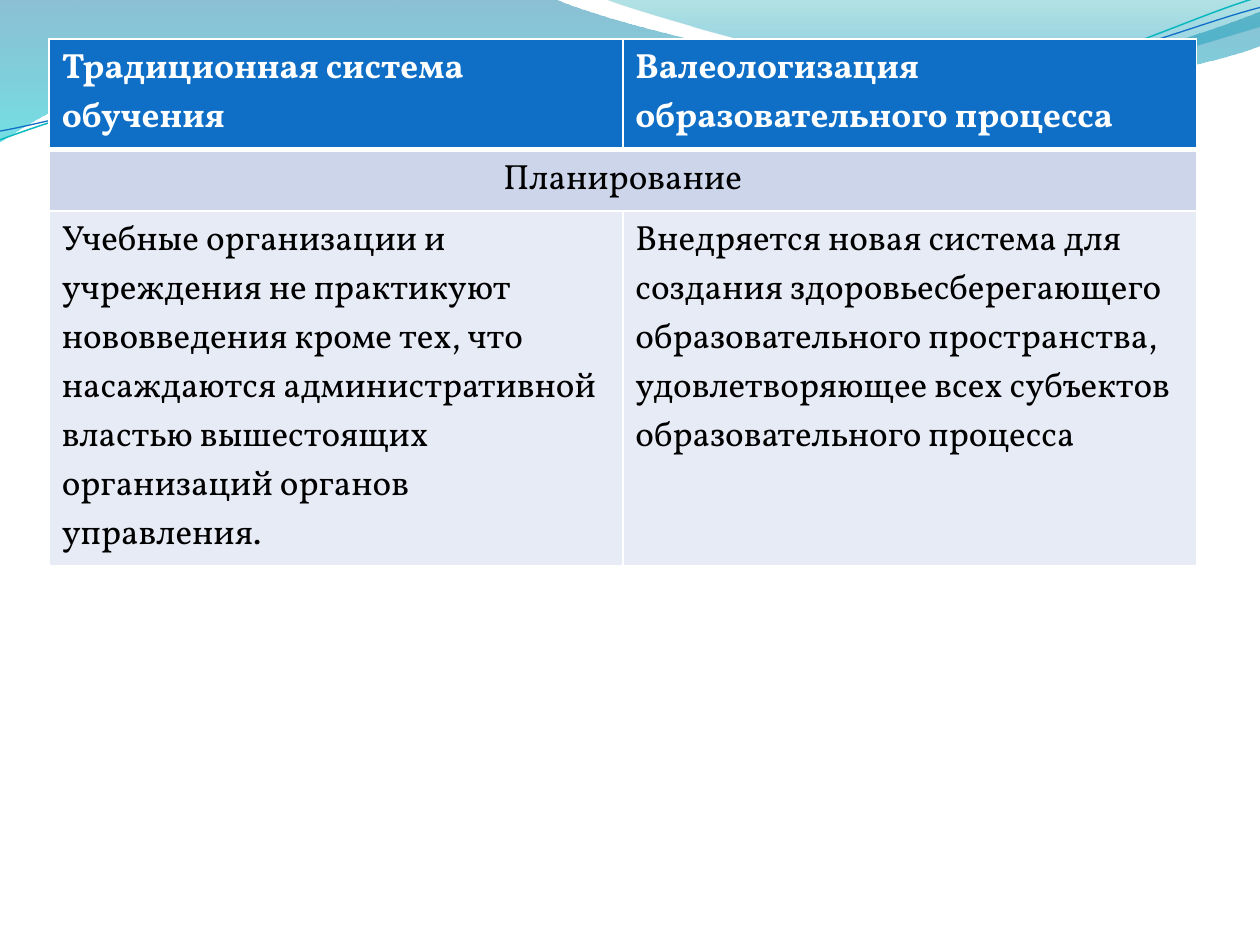
from dataclasses import dataclass
from math import cos, radians, sin

from lxml.etree import SubElement
from pptx import Presentation
from pptx.dml.color import RGBColor as RGB
from pptx.enum.text import PP_ALIGN as ALIGN
from pptx.oxml import parse_xml
from pptx.oxml.ns import nsdecls, qn
from pptx.util import Pt


@dataclass(frozen=True)
class Theme:
    """Colours, font and sizes of the slide."""
    font: str = "Vollkorn"
    size: float = 20
    white: str = "FFFFFF"
    black: str = "000000"
    blue: str = "0F6FC6"
    teal: str = "0AB8BF"
    section: str = "CCD5EA"
    body: str = "E7EBF5"
    wave_back: tuple = ((0, "0074A1", 45), (100, "00C6CF", 55))
    wave_front: tuple = ((0, "00A1A9", 30), (80, "008BBF", 45))
    tilt: float = 357.3


def rotate(x, y, center, degrees):
    """Turn a point clockwise about a center."""
    a, dx, dy = radians(degrees), x - center[0], y - center[1]
    return (center[0] + dx * cos(a) - dy * sin(a),
            center[1] + dx * sin(a) + dy * cos(a))


class Deck:
    """Holds the theme and the slide, and draws each kind of element."""

    def __init__(self, theme):
        """Start a one-slide presentation."""
        self.theme = theme
        self.prs = Presentation()
        self.prs.slide_width, self.prs.slide_height = Pt(720), Pt(540)
        self.s = self.prs.slides.add_slide(self.prs.slide_layouts[6])

    def outline(self, start, segments, closed):
        """Add a freeform of straight (1 point) and cubic (3 points) parts."""
        pts = [(Pt(x), Pt(y)) for seg in segments for x, y in seg]
        fb = self.s.shapes.build_freeform(Pt(start[0]), Pt(start[1]))
        fb.add_line_segments(pts, close=closed)
        sp = fb.convert_to_shape()
        sp.shadow.inherit = False
        lines = iter(list(sp.element.iter(qn("a:lnTo"))))
        for seg in segments:
            first = next(lines)
            if len(seg) == 3:
                first.tag_name = None
                curve = parse_xml(f'<a:cubicBezTo {nsdecls("a")}/>')
                first.addprevious(curve)
                for ln in (first, next(lines), next(lines)):
                    curve.append(ln[0])
                    ln.getparent().remove(ln)
        return sp

    def wave(self, start, segments, stops):
        """Add a closed wave with a translucent vertical gradient."""
        sp = self.outline(start, segments, True)
        sp.line.fill.background()
        gs = "".join(
            f'<a:gs pos="{pos * 1000}"><a:srgbClr val="{color}">'
            f'<a:alpha val="{alpha * 1000}"/></a:srgbClr></a:gs>'
            for pos, color, alpha in stops)
        grad = parse_xml(f'<a:gradFill {nsdecls("a")}><a:gsLst>{gs}</a:gsLst>'
                         '<a:lin ang="5400000" scaled="0"/></a:gradFill>')
        sp.element.spPr.find(qn("a:custGeom")).addnext(grad)

    def strand(self, start, segments, center, color, width):
        """Add an open curve, level in its frame and tilted as a whole."""
        tilt = self.theme.tilt
        level = [[rotate(x, y, center, -tilt) for x, y in seg]
                 for seg in segments]
        sp = self.outline(rotate(*start, center, -tilt), level, False)
        sp.rotation = tilt
        sp.fill.background()
        sp.line.color.rgb = RGB.from_string(color)
        sp.line.width = Pt(width)

    def borders(self, cell, top, bottom):
        """Give a cell white borders."""
        tc_pr = cell._tc.get_or_add_tcPr()
        widths = (("L", 1), ("R", 1), ("T", top), ("B", bottom))
        for i, (side, width) in enumerate(widths):
            ln = SubElement(tc_pr, qn(f"a:ln{side}"), w=str(Pt(width)))
            fill = SubElement(ln, qn("a:solidFill"))
            SubElement(fill, qn("a:srgbClr"), val=self.theme.white)
            tc_pr.insert(i, ln)

    def cell(self, cell, text, fill, color, bold=False, align=ALIGN.LEFT):
        """Fill a cell and write its text."""
        cell.fill.solid()
        cell.fill.fore_color.rgb = RGB.from_string(fill)
        cell.text_frame.text = text
        p = cell.text_frame.paragraphs[0]
        p.alignment = align
        for r in p.runs:
            r.font.name, r.font.size = self.theme.font, Pt(self.theme.size)
            r.font.bold = bold
            r.font.color.rgb = RGB.from_string(color)

    def table(self, box, heights, header, section, body):
        """Add a table with a header, a merged section row and a body row."""
        th = self.theme
        frame = self.s.shapes.add_table(3, 2, *map(Pt, box))
        tbl = frame.table
        for row, height in zip(tbl.rows, heights):
            row.height = Pt(height)
        frame.height = Pt(box[3])
        tbl.cell(1, 0).merge(tbl.cell(1, 1))
        for c in range(2):
            self.cell(tbl.cell(0, c), header[c], th.blue, th.white, bold=True)
            self.cell(tbl.cell(2, c), body[c], th.body, th.black)
            for r, (upper, lower) in enumerate(((1, 3), (3, 1), (1, 1))):
                self.borders(tbl.cell(r, c), upper, lower)
        self.cell(tbl.cell(1, 0), section, th.section, th.black,
                  align=ALIGN.CENTER)


def main():
    """Build and save the slide."""
    th = Theme()
    deck = Deck(th)
    deck.wave((0, 0), [
        [(316.8, -0.7)],
        [(342.7, 12.2), (478.1, 45.4), (545.8, 45.4)],
        [(614.2, 45.4), (689.8, 18.7), (720, 6.5)],
        [(720.7, 25.9)],
        [(707.8, 31.7), (626.4, 54.7), (537.1, 54)],
        [(447.8, 54), (275, 20.2), (185, 24.5)],
        [(92.9, 25.9), (33.1, 59.8), (-0.7, 81.4)]], th.wave_back)
    deck.wave((344.9, -0.7), [
        [(366.5, 7.9), (491, 44.6), (553.7, 46.8)],
        [(616.3, 49.7), (691.9, 23), (720, 15.1)],
        [(720, 0)]], th.wave_front)
    deck.strand((0, 79.9), [
        [(34.6, 67), (113.8, 41), (199.4, 37.4)],
        [(284.4, 33.8), (427, 64.1), (513.4, 57.6)],
        [(599.8, 51.1), (675.4, 10.8), (718.6, -1.4)]],
        (359.3, 41.4), th.teal, 0.85)
    deck.strand((0, 74.9), [
        [(33.8, 69.1), (118.1, 43.9), (203.8, 40.3)],
        [(290.2, 36.7), (429.8, 60.5), (516.2, 54)],
        [(601.9, 48.2), (677.5, 15.1), (720, 4.3)]],
        (359.6, 42.5), th.blue, 0.75)
    deck.table(
        (28.1, 22.3, 655.6, 239), (55.4, 31.7, 126),
        ("Традиционная система обучения",
         "Валеологизация образовательного процесса"),
        "Планирование",
        ("Учебные организации и учреждения не практикуют нововведения кроме "
         "тех, что насаждаются административной властью вышестоящих "
         "организаций органов управления.",
         "Внедряется новая система для создания здоровьесберегающего "
         "образовательного пространства, удовлетворяющее всех субъектов "
         "образовательного процесса"))
    deck.prs.save("out.pptx")


if __name__ == "__main__":
    main()
